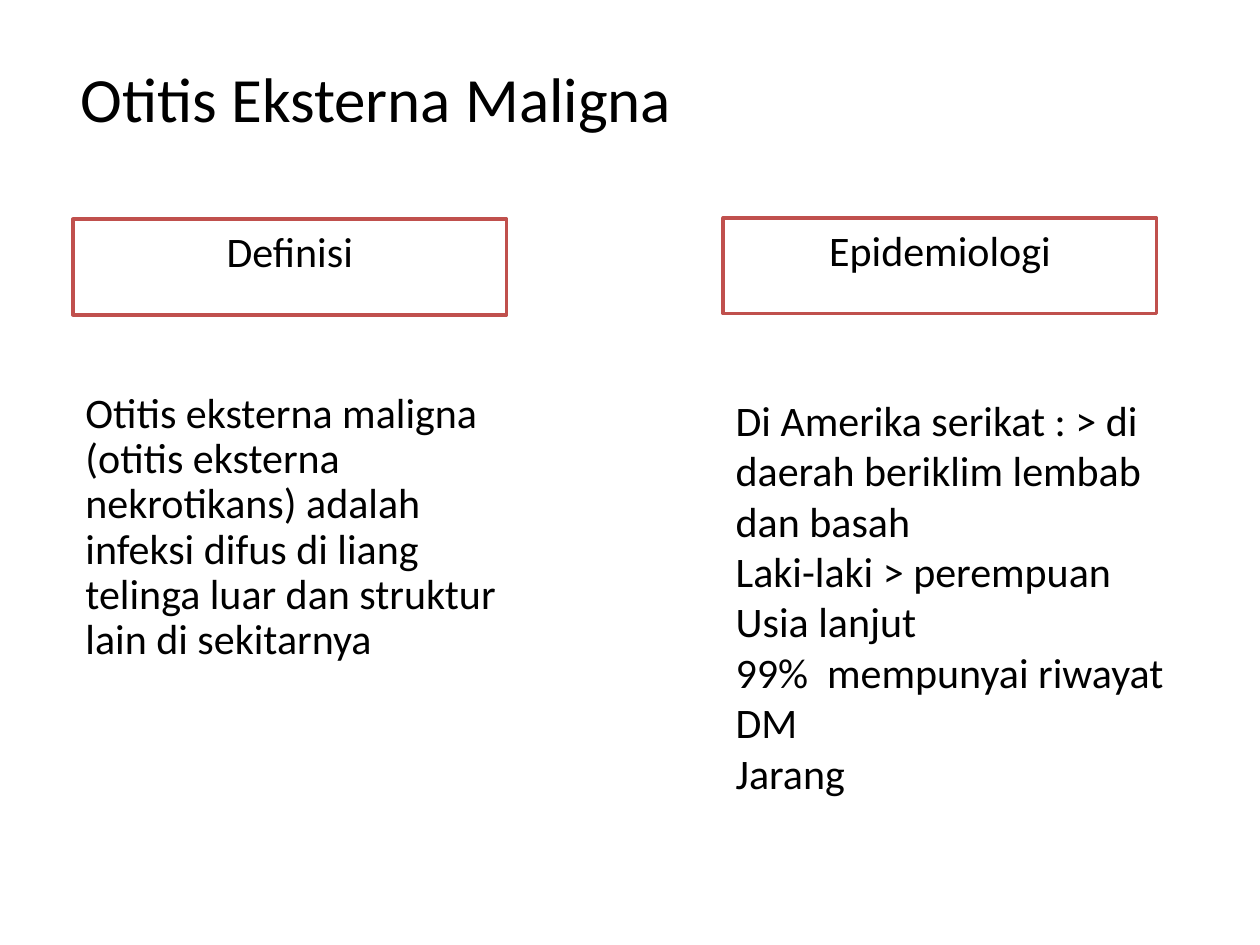
from pptx import Presentation
from pptx.dml.color import RGBColor
from pptx.enum.shapes import MSO_SHAPE
from pptx.enum.text import MSO_ANCHOR, MSO_AUTO_SIZE, PP_ALIGN
from pptx.util import Inches, Pt

COLORS = {"text": "000000", "panel": "FFFFFF", "border": "C0504D"}
COLUMN_LEFTS = (0.58, 5.74)
HEADING_WIDTH, HEADING_HEIGHT = 3.44, 0.76
BODY_WIDTH, BODY_HEIGHT = 3.68, 3.18

COLUMNS = [
    {
        "heading": "Definisi",
        "heading_top": 1.74,
        "body_top": 3.06,
        "line_spacing": 0.9,
        "body": [
            "Otitis eksterna maligna (otitis eksterna nekrotikans) adalah "
            "infeksi difus di liang telinga luar dan struktur lain di sekitarnya"
        ],
    },
    {
        "heading": "Epidemiologi",
        "heading_top": 1.73,
        "body_top": 3.08,
        "line_spacing": 1.0,
        "body": [
            "Di Amerika serikat : > di daerah beriklim lembab dan basah",
            "Laki-laki > perempuan",
            "Usia lanjut",
            "99%  mempunyai riwayat DM",
            "Jarang",
        ],
    },
]


def write(box, lines, size=24, align=PP_ALIGN.LEFT, line_spacing=1.0):
    frame = box.text_frame
    frame.word_wrap = True
    frame.auto_size = MSO_AUTO_SIZE.NONE
    frame.vertical_anchor = MSO_ANCHOR.TOP
    frame.text = "\n".join(lines)
    for para in frame.paragraphs:
        para.alignment = align
        para.line_spacing = line_spacing
        para.space_before = Pt(0)
        para.font.size = Pt(size)
        para.font.name = "Calibri"
        para.font.color.rgb = RGBColor.from_string(COLORS["text"])


deck = Presentation()
deck.slide_width, deck.slide_height = Inches(10), Inches(7.5)
page = deck.slides.add_slide(deck.slide_layouts[5])

title = page.shapes.title
title.left, title.top = Inches(0.54), Inches(0.42)
title.width, title.height = Inches(7.54), Inches(1.18)
write(title, ["Otitis Eksterna Maligna"], size=36)

for left, column in zip(COLUMN_LEFTS, COLUMNS):
    heading = page.shapes.add_shape(
        MSO_SHAPE.RECTANGLE, Inches(left), Inches(column["heading_top"]),
        Inches(HEADING_WIDTH), Inches(HEADING_HEIGHT))
    heading.shadow.inherit = False
    heading.fill.solid()
    heading.fill.fore_color.rgb = RGBColor.from_string(COLORS["panel"])
    heading.line.color.rgb = RGBColor.from_string(COLORS["border"])
    heading.line.width = Pt(2)
    write(heading, [column["heading"]], align=PP_ALIGN.CENTER)

    body = page.shapes.add_textbox(
        Inches(left), Inches(column["body_top"]),
        Inches(BODY_WIDTH), Inches(BODY_HEIGHT))
    write(body, column["body"], line_spacing=column["line_spacing"])

deck.save("out.pptx")
